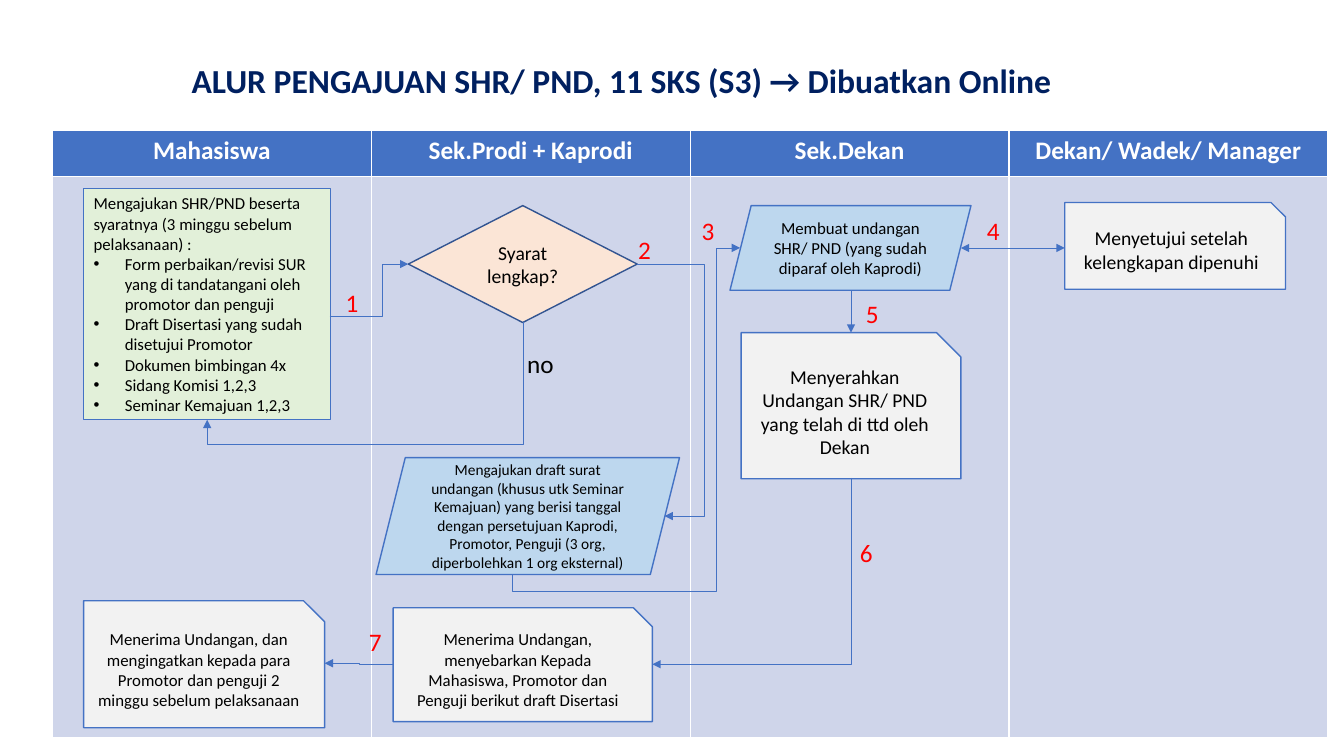
from dataclasses import dataclass

from lxml.etree import SubElement
from pptx import Presentation
from pptx.dml.color import RGBColor
from pptx.enum.shapes import MSO_CONNECTOR as Wire, MSO_SHAPE as Form
from pptx.enum.text import MSO_ANCHOR as Anchor, MSO_AUTO_SIZE as Fit, PP_ALIGN as Align
from pptx.oxml.ns import qn
from pptx.shapes.autoshape import Shape
from pptx.shapes.connector import Connector
from pptx.slide import Slide
from pptx.text.text import TextFrame
from pptx.util import Emu, Pt

SCALE = 9144
FONT = "Calibri"
BLUE = RGBColor(0x44, 0x72, 0xC4)
DARK = RGBColor(0x32, 0x54, 0x91)
NAVY = RGBColor(0x00, 0x20, 0x60)
LANE = RGBColor(0xCF, 0xD5, 0xEA)
GREEN = RGBColor(0xE2, 0xF0, 0xD9)
PEACH = RGBColor(0xFB, 0xE5, 0xD6)
SKY = RGBColor(0xBD, 0xD7, 0xEE)
GREY = RGBColor(0xF2, 0xF2, 0xF2)
WHITE = RGBColor(0xFF, 0xFF, 0xFF)
BLACK = RGBColor(0x00, 0x00, 0x00)
RED = RGBColor(0xFF, 0x00, 0x00)


@dataclass(frozen=True)
class Step:
    key: str
    form: Form
    left: int
    top: int
    width: int
    height: int
    fill: RGBColor
    size: int
    text: str
    edge: RGBColor = BLUE


@dataclass(frozen=True)
class Bend:
    x1: int
    y1: int
    x2: int
    y2: int
    kind: str = "bentConnector3"
    turn: int = 0
    pulls: tuple[int, ...] = ()


@dataclass(frozen=True)
class Label:
    text: str
    left: int
    top: int
    width: int = 33
    color: RGBColor = RED


TITLE = "ALUR PENGAJUAN SHR/ PND, 11 SKS (S3) → Dibuatkan Online"
LANES = ("Mahasiswa", "Sek.Prodi + Kaprodi", "Sek.Dekan", "Dekan/ Wadek/ Manager")
NEEDS = "\n".join((
    "Mengajukan SHR/PND beserta syaratnya (3 minggu sebelum pelaksanaan) :",
    "Form perbaikan/revisi SUR yang di tandatangani oleh promotor dan penguji",
    "Draft Disertasi yang sudah disetujui Promotor",
    "Dokumen bimbingan 4x",
    "Sidang Komisi 1,2,3",
    "Seminar Kemajuan 1,2,3",
))
STEPS = (
    Step("apply", Form.RECTANGLE, 83, 187, 245, 229, GREEN, 12, NEEDS),
    Step("check", Form.DIAMOND, 405, 204, 227, 116, PEACH, 14, "Syarat lengkap?", DARK),
    Step("invite", Form.PARALLELOGRAM, 724, 204, 239, 84, SKY, 12,
         "Membuat undangan SHR/ PND (yang sudah diparaf oleh Kaprodi)"),
    Step("draft", Form.PARALLELOGRAM, 373, 454, 301, 116, SKY, 11,
         "Mengajukan draft surat undangan (khusus utk Seminar Kemajuan) yang berisi tanggal "
         "dengan persetujuan Kaprodi, Promotor, Penguji (3 org, diperbolehkan 1 org eksternal)"),
    Step("hand", Form.SNIP_1_RECTANGLE, 735, 330, 218, 145, GREY, 14,
         "Menyerahkan Undangan SHR/ PND yang telah di ttd oleh Dekan"),
    Step("spread", Form.SNIP_1_RECTANGLE, 390, 603, 257, 113, GREY, 12,
         "Menerima Undangan, menyebarkan Kepada Mahasiswa, Promotor dan Penguji "
         "berikut draft Disertasi"),
    Step("remind", Form.SNIP_1_RECTANGLE, 83, 596, 239, 126, GREY, 12,
         "Menerima Undangan, dan mengingatkan kepada para Promotor dan penguji "
         "2 minggu sebelum pelaksanaan"),
    Step("approve", Form.SNIP_1_RECTANGLE, 1056, 201, 219, 86, GREY, 14,
         "Menyetujui setelah kelengkapan dipenuhi"),
)
BENDS = (
    Bend(327, 314, 405, 262, pulls=(67200,)),
    Bend(314, 211, 411, 525, turn=90, pulls=(124700,)),
    Bend(632, 262, 659, 512, pulls=(247900,)),
    Bend(783, 521, 459, 295, "bentConnector4", 90, (-5200, 89500)),
    Bend(653, 468, 838, 665, "bentConnector2", 90),
    Bend(390, 659, 322, 658, pulls=(50000,)),
)
LABELS = (
    Label("no", 513, 341, 47, BLACK),
    Label("1", 333, 280),
    Label("2", 623, 228),
    Label("3", 686, 209),
    Label("4", 969, 209),
    Label("5", 849, 291),
    Label("6", 843, 528),
    Label("7", 356, 616),
)


def px(*sides: int) -> list[Emu]:
    return [Emu(side * SCALE) for side in sides]


def style(frame: TextFrame, size: int, color: RGBColor, align: Align, bold: bool = False) -> None:
    for para in frame.paragraphs:
        para.alignment = align
        for run in para.runs:
            run.font.name = FONT
            run.font.size = Pt(size)
            run.font.bold = bold
            run.font.color.rgb = color


def draw_title(slide: Slide) -> None:
    title = slide.shapes.title
    title.left, title.top, title.width, title.height = px(180, 54, 883, 50)
    frame = title.text_frame
    frame.text = TITLE
    frame.word_wrap = False
    frame.auto_size = Fit.NONE
    frame.vertical_anchor = Anchor.TOP
    style(frame, 24, NAVY, Align.LEFT, True)


def draw_lanes(slide: Slide) -> None:
    table = slide.shapes.add_table(2, len(LANES), *px(52, 129, 1265, 603)).table
    table.rows[0].height, table.rows[1].height = px(46, 557)
    for col, name in enumerate(LANES):
        head, body = table.cell(0, col), table.cell(1, col)
        head.text = name
        style(head.text_frame, 18, WHITE, Align.CENTER, True)
        for cell, fill in ((head, BLUE), (body, LANE)):
            cell.fill.solid()
            cell.fill.fore_color.rgb = fill


def draw_step(slide: Slide, step: Step) -> Shape:
    shape = slide.shapes.add_shape(step.form, *px(step.left, step.top, step.width, step.height))
    shape.shadow.inherit = False
    shape.fill.solid()
    shape.fill.fore_color.rgb = step.fill
    shape.line.color.rgb = step.edge
    shape.line.width = Pt(1)
    frame = shape.text_frame
    frame.text = step.text
    frame.word_wrap = True
    frame.vertical_anchor = Anchor.MIDDLE
    listed = len(frame.paragraphs) > 1
    style(frame, step.size, BLACK, Align.LEFT if listed else Align.CENTER)
    for para in frame.paragraphs[1:]:
        props = para._p.get_or_add_pPr()
        props.set("marL", str(31 * SCALE))
        props.set("indent", str(-31 * SCALE))
        SubElement(props, qn("a:buFont"), typeface="Arial")
        SubElement(props, qn("a:buChar"), char="•")
    return shape


def draw_wire(slide: Slide, kind: Wire, ends: tuple[int, ...], both: bool = False) -> Connector:
    wire = slide.shapes.add_connector(kind, *px(*ends))
    wire.line.color.rgb = BLUE
    wire.line.width = Pt(0.5)
    line = wire.line._get_or_add_ln()
    if both:
        SubElement(line, qn("a:headEnd"), type="triangle")
    SubElement(line, qn("a:tailEnd"), type="triangle")
    SubElement(wire._element.spPr, qn("a:effectLst"))
    return wire


def draw_bend(slide: Slide, bend: Bend) -> None:
    wire = draw_wire(slide, Wire.ELBOW, (bend.x1, bend.y1, bend.x2, bend.y2))
    props = wire._element.spPr
    props.find(qn("a:xfrm")).set("rot", str(bend.turn * 60000))
    shape = props.find(qn("a:prstGeom"))
    shape.set("prst", bend.kind)
    for child in list(shape):
        shape.remove(child)
    pulls = SubElement(shape, qn("a:avLst"))
    for rank, pull in enumerate(bend.pulls, 1):
        SubElement(pulls, qn("a:gd"), name=f"adj{rank}", fmla=f"val {pull}")


def draw_label(slide: Slide, label: Label) -> None:
    frame = slide.shapes.add_textbox(*px(label.left, label.top, label.width, 40)).text_frame
    frame.text = label.text
    frame.word_wrap = False
    frame.auto_size = Fit.SHAPE_TO_FIT_TEXT
    style(frame, 18, label.color, Align.LEFT)


def main() -> None:
    deck = Presentation()
    deck.slide_width, deck.slide_height = px(1333, 750)
    slide = deck.slides.add_slide(deck.slide_layouts[5])
    draw_title(slide)
    draw_lanes(slide)
    shapes = {step.key: draw_step(slide, step) for step in STEPS}
    for bend in BENDS:
        draw_bend(slide, bend)
    draw_wire(slide, Wire.STRAIGHT, (844, 288, 844, 330)).end_connect(shapes["hand"], 0)
    draw_wire(slide, Wire.STRAIGHT, (953, 246, 1056, 246), both=True)
    for label in LABELS:
        draw_label(slide, label)
    deck.save("out.pptx")


if __name__ == "__main__":
    main()
